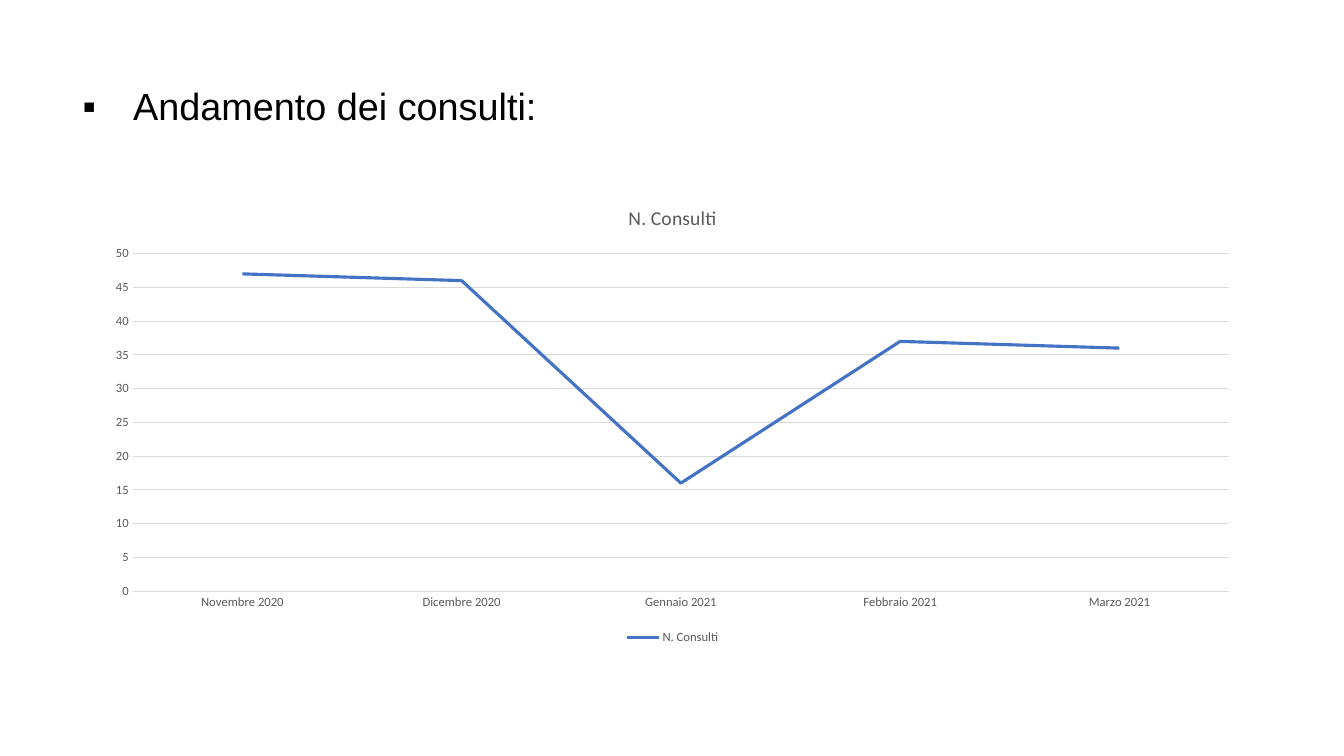
from dataclasses import dataclass

from lxml.etree import SubElement
from pptx import Presentation
from pptx.chart.data import CategoryChartData
from pptx.dml.color import RGBColor
from pptx.enum.chart import XL_CHART_TYPE as ChartType
from pptx.enum.chart import XL_LEGEND_POSITION as LegendPos
from pptx.enum.chart import XL_MARKER_STYLE as Marker
from pptx.enum.chart import XL_TICK_MARK as Tick
from pptx.enum.text import MSO_ANCHOR as Anchor
from pptx.enum.text import PP_ALIGN as Align
from pptx.oxml.ns import qn
from pptx.util import Inches, Pt


@dataclass(frozen=True)
class Theme:
    ink: str = "000000"
    muted: str = "595959"
    grid: str = "D9D9D9"
    accent: str = "4472C4"
    heading_font: str = "Arial"
    chart_font: str = "Calibri"
    heading: float = 27
    chart_title: float = 14
    chart_base: float = 10
    label: float = 9
    hairline: float = 0.75
    series_line: float = 2.25


T = Theme()
SERIES = "N. Consulti"
CONSULTI = {
    "Novembre 2020": 47,
    "Dicembre 2020": 46,
    "Gennaio 2021": 16,
    "Febbraio 2021": 37,
    "Marzo 2021": 36,
}


def style_font(font, size, color=T.muted, name=T.chart_font):
    font.size, font.name, font.bold = Pt(size), name, False
    font.color.rgb = RGBColor.from_string(color)


def style_line(line, color, width):
    line.color.rgb = RGBColor.from_string(color)
    line.width = Pt(width)


def add_bullet(p, char, font, indent):
    pPr = p._p.get_or_add_pPr()
    pPr.set("marL", str(indent))
    pPr.set("indent", str(-indent))
    SubElement(pPr, qn("a:buFont")).set("typeface", font)
    SubElement(pPr, qn("a:buChar")).set("char", char)


def write_text(tf, text, bullet=None, spacing=None, align=Align.LEFT, **fmt):
    p = tf.paragraphs[0]
    if bullet:
        add_bullet(p, bullet, T.heading_font, Inches(0.5))
    p.alignment, p.line_spacing = align, spacing
    r = p.add_run()
    r.text = text
    style_font(r.font, **fmt)


def add_heading(s, text, box):
    sp = s.shapes.title
    sp.left, sp.top, sp.width, sp.height = map(Inches, box)
    tf = sp.text_frame
    tf.word_wrap = True
    tf.vertical_anchor = Anchor.TOP
    tf.margin_top = Inches(0.18)
    write_text(tf, text, bullet="▪", spacing=0.9,
               size=T.heading, color=T.ink, name=T.heading_font)


def style_axis(axis):
    axis.major_tick_mark = axis.minor_tick_mark = Tick.NONE
    style_font(axis.tick_labels.font, T.label)


def add_line_chart(s, name, values, box):
    data = CategoryChartData()
    data.categories = list(values)
    data.add_series(name, list(values.values()))
    chart = s.shapes.add_chart(ChartType.LINE, *map(Inches, box), data).chart
    style_font(chart.font, T.chart_base, T.ink)
    chart.has_title = True
    write_text(chart.chart_title.text_frame, name, align=Align.CENTER,
               size=T.chart_title)
    chart.chart_title.include_in_layout = False

    chart.has_legend = True
    chart.legend.position = LegendPos.BOTTOM
    chart.legend.include_in_layout = False
    style_font(chart.legend.font, T.label)

    months, counts = chart.category_axis, chart.value_axis
    style_axis(months)
    style_line(months.format.line, T.grid, T.hairline)
    style_axis(counts)
    counts.format.line.fill.background()
    counts.minimum_scale, counts.maximum_scale, counts.major_unit = 0, 50, 5
    style_line(counts.major_gridlines.format.line, T.grid, T.hairline)

    plot = chart.plots[0]
    plot.vary_by_categories = False
    series = plot.series[0]
    series.smooth = False
    series.marker.style = Marker.NONE
    style_line(series.format.line, T.accent, T.series_line)


def main():
    prs = Presentation()
    prs.slide_width, prs.slide_height = Inches(13.33), Inches(7.5)
    s = prs.slides.add_slide(prs.slide_layouts[5])
    add_heading(s, "Andamento dei consulti:", (0.72, 0.69, 11.5, 1.45))
    add_line_chart(s, SERIES, CONSULTI, (0.92, 1.85, 11.5, 4.59))
    prs.save("out.pptx")


if __name__ == "__main__":
    main()
